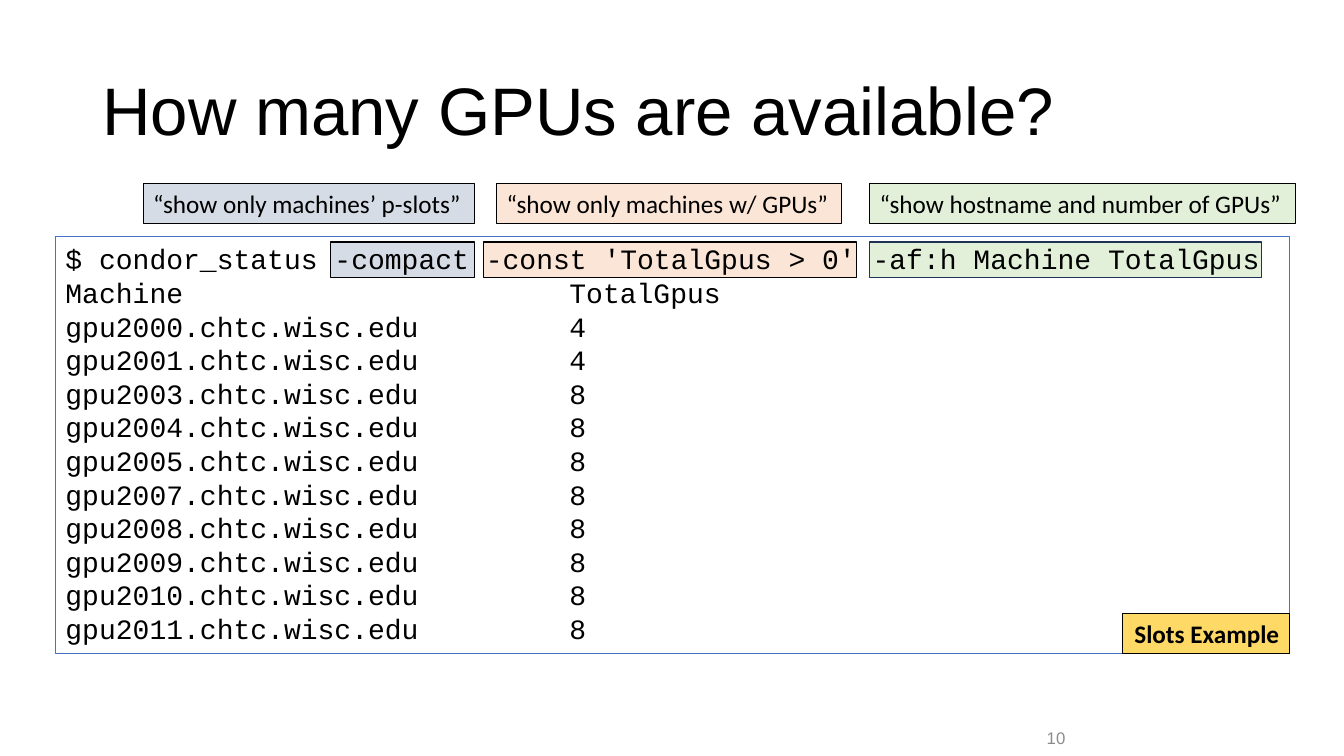
from dataclasses import dataclass

from lxml.etree import SubElement
from pptx import Presentation
from pptx.dml.color import RGBColor
from pptx.enum.shapes import MSO_SHAPE as SHAPE
from pptx.enum.text import MSO_ANCHOR as ANCHOR, PP_ALIGN as ALIGN
from pptx.oxml.ns import qn
from pptx.util import Cm, Pt

TITLE = "How many GPUs are available?"
PAGE = "10"
BADGE = "Slots Example"
COMMAND = "$ condor_status -compact -const 'TotalGpus > 0' -af:h Machine TotalGpus"
HEADER = ("Machine", "TotalGpus")
GPUS = {
    2000: 4, 2001: 4, 2003: 8, 2004: 8, 2005: 8,
    2007: 8, 2008: 8, 2009: 8, 2010: 8, 2011: 8,
}
OPTIONS = [
    dict(note="“show only machines’ p-slots”", note_x=3.61, note_w=8.36,
         x=8.33, w=3.63, fill="D6DCE5", line="000000"),
    dict(note="“show only machines w/ GPUs”", note_x=12.52, note_w=8.69,
         x=12.19, w=9.4, fill="FBE5D6", line="000000"),
    dict(note="“show hostname and number of GPUs”", note_x=21.92, note_w=10.74,
         x=21.92, w=9.88, fill="E2F0D9", line="1E3256"),
]


@dataclass(frozen=True)
class Theme:
    ink: str = "000000"
    muted: str = "8C8C8C"
    frame: str = "4472C4"
    badge: str = "FFD966"
    sans: str = "Arial"
    label: str = "Calibri"
    mono: str = "Courier New"
    title_size: int = 48
    code_size: int = 20
    label_size: int = 18
    page_size: int = 12


T = Theme()
NOTE_Y, NOTE_H = 4.62, 1.02
MARK_Y, MARK_H = 6.1, 0.89
CODE_X, CODE_Y, CODE_W, CODE_H = 1.4, 5.97, 31.09, 10.51
BADGE_W = 4.19
COLUMN_TAB = 12.7


def add_box(s, x, y, w, h, line, fill=None, weight=0.75):
    sp = s.shapes.add_shape(SHAPE.RECTANGLE, Cm(x), Cm(y), Cm(w), Cm(h))
    sp.shadow.inherit = False
    if fill:
        sp.fill.solid()
        sp.fill.fore_color.rgb = RGBColor.from_string(fill)
    else:
        sp.fill.background()
    sp.line.color.rgb = RGBColor.from_string(line)
    sp.line.width = Pt(weight)
    return sp


def write(sp, text, size, font, color=T.ink, bold=False, align=ALIGN.LEFT,
          anchor=ANCHOR.TOP, wrap=True, spacing=None, tab=None):
    tf = sp.text_frame
    tf.word_wrap = wrap
    tf.vertical_anchor = anchor
    for i, line in enumerate(text.split("\n")):
        p = tf.add_paragraph() if i else tf.paragraphs[0]
        p.alignment = align
        if spacing:
            p.line_spacing = spacing
        if tab:
            tabs = SubElement(p._p.get_or_add_pPr(), qn("a:tabLst"))
            SubElement(tabs, qn("a:tab"), pos=str(Cm(tab)), algn="l")
        r = p.add_run()
        r.text = line
        r.font.size = Pt(size)
        r.font.name = font
        r.font.bold = bold
        r.font.color.rgb = RGBColor.from_string(color)


def main():
    prs = Presentation()
    prs.slide_width, prs.slide_height = Cm(33.87), Cm(19.05)
    s = prs.slides.add_slide(prs.slide_layouts[6])

    for o in OPTIONS:
        add_box(s, o["x"], MARK_Y, o["w"], MARK_H, o["line"], o["fill"], 1)

    title = s.shapes.add_textbox(Cm(2.33), Cm(1.02), Cm(29.21), Cm(3.68))
    write(title, TITLE, T.title_size, T.sans, anchor=ANCHOR.MIDDLE, spacing=0.9)

    page = s.shapes.add_textbox(Cm(23.29), Cm(17.96), Cm(3.81), Cm(1.02))
    write(page, PAGE, T.page_size, T.sans, T.muted, align=ALIGN.RIGHT,
          anchor=ANCHOR.BOTTOM)

    rows = [HEADER] + [(f"gpu{n}.chtc.wisc.edu", str(c)) for n, c in GPUS.items()]
    listing = "\n".join([COMMAND] + ["\t".join(row) for row in rows])
    code = add_box(s, CODE_X, CODE_Y, CODE_W, CODE_H, T.frame)
    write(code, listing, T.code_size, T.mono, tab=COLUMN_TAB)

    badge = add_box(s, CODE_X + CODE_W - BADGE_W, CODE_Y + CODE_H - NOTE_H,
                    BADGE_W, NOTE_H, T.ink, T.badge)
    write(badge, BADGE, T.label_size, T.label, bold=True, align=ALIGN.RIGHT,
          wrap=False)

    for o in OPTIONS:
        note = add_box(s, o["note_x"], NOTE_Y, o["note_w"], NOTE_H, T.ink, o["fill"])
        write(note, o["note"], T.label_size, T.label, wrap=False)

    prs.save("out.pptx")


if __name__ == "__main__":
    main()
